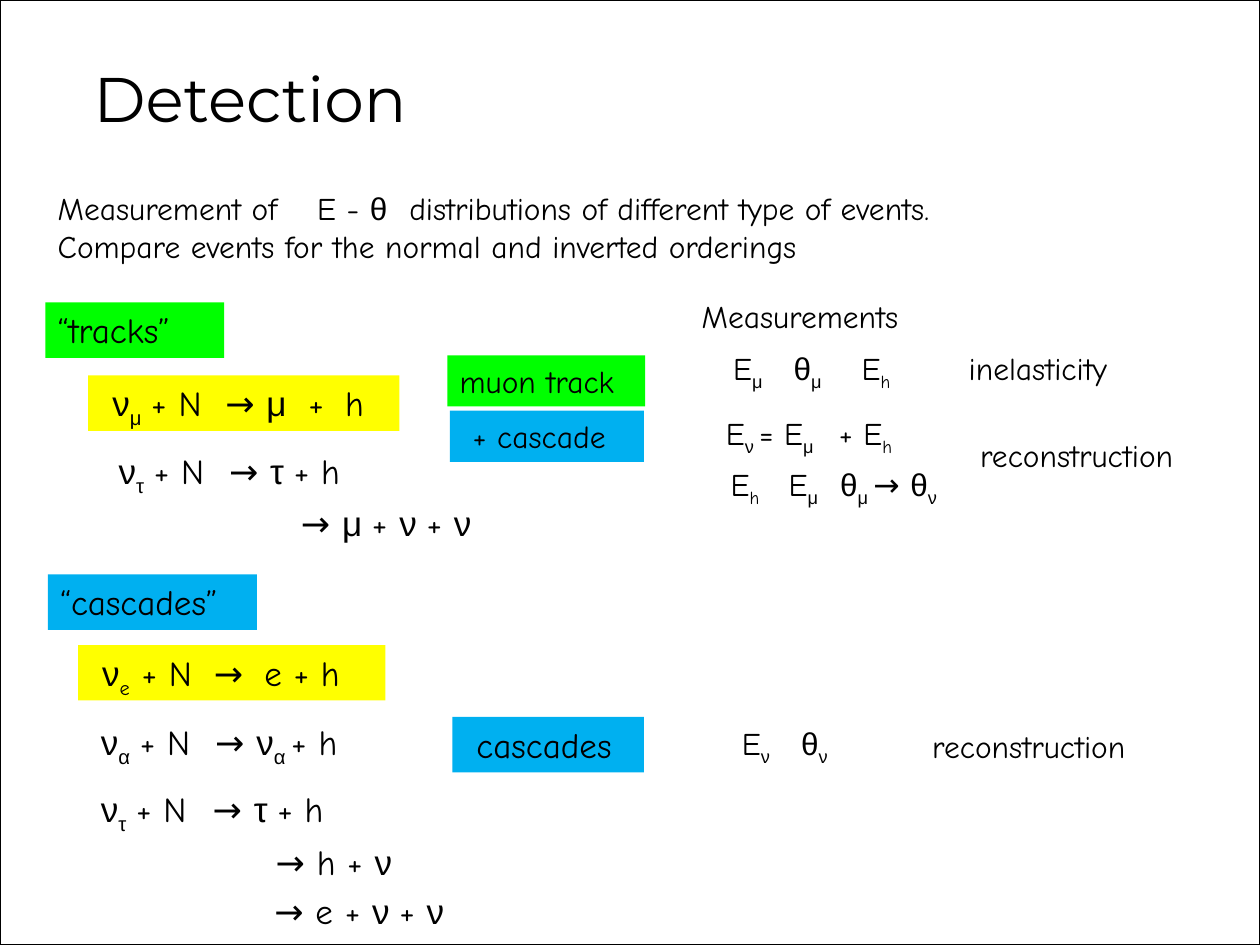
"""Build the Detection slide on a grid of 100 columns by 75 rows."""
from itertools import groupby
from pptx import Presentation
from pptx.dml.color import RGBColor
from pptx.enum.shapes import MSO_SHAPE
from pptx.enum.text import MSO_AUTO_SIZE, PP_ALIGN
from pptx.oxml.ns import qn
from pptx.util import Pt
from lxml.etree import SubElement

GREEN, BLUE, YELLOW, WHITE, BLACK = "00FF00", "00B0F0", "FFFF00", "FFFFFF", "000000"
GREEK = "αθμντ"

prs = Presentation()
prs.slide_width, prs.slide_height = Pt(720), Pt(540)
U = prs.slide_width // 100
s = prs.slides.add_slide(prs.slide_layouts[6])


def rgb(value):
    return RGBColor.from_string(value)


def add_runs(p, text):
    """Write text: [..] is subscript, Greek letters and the spaces after them are Arial."""
    marked, low, font = [], False, "Comic Neue"
    for ch in text:
        if ch in "[]":
            low = ch == "["
            continue
        if ch != " ":
            font = "Arial" if ch in GREEK else "Comic Neue"
        marked.append((ch, font, low))
    for (font, low), group in groupby(marked, key=lambda m: m[1:]):
        r = p.add_run()
        r.text = "".join(m[0] for m in group)
        r.font.name = font
        if low:
            r._r.get_or_add_rPr().set("baseline", "-25000")


sp = s.shapes.add_shape(MSO_SHAPE.RECTANGLE, 0, 0, prs.slide_width, prs.slide_height)
sp.shadow.inherit = False
sp.fill.solid()
sp.fill.fore_color.rgb = rgb(WHITE)
sp.line.color.rgb = rgb(BLACK)
sp.line.width = Pt(0.75)

title = s.shapes.add_textbox(4.2 * U, 4.2 * U, 31.3 * U, 9.1 * U)
title.text_frame.word_wrap = False
p = title.text_frame.paragraphs[0]
p.text = "Detection"
p.alignment = PP_ALIGN.CENTER
p.font.name, p.font.size, p.font.color.rgb = "Montserrat", Pt(36), rgb(BLACK)

boxes = [
    (7, 29.8, 24.7, 20, YELLOW, " ν[μ] + N\t→ μ\t+\th", (9.9, 16.5, 19.4)),
    (35.5, 28.2, 15.7, 18, GREEN, "muon track", ()),
    (35.7, 32.6, 15.4, 18, BLUE, " + cascade", ()),
    (54.7, 23.1, 19.5, 18, None, "Measurements", ()),
    (57.2, 27.2, 15.8, 18, WHITE, "E[μ]\tθ[μ]\tE[h]", (4.8, 10.2)),
    (76.8, 34.1, 21.8, 18, None, "reconstruction", ()),
    (55.8, 32.4, 18.5, 18, WHITE, " E[ν ]= E[μ]\t+ E[h]", (9.8,)),
    (57, 36.4, 19.5, 18, WHITE, "E[h]\tE[μ]\tθ[μ ]→ θ[ν]", (4.6, 8.7)),
    (3.6, 14.5, 83.3, 18, None,
     "Measurement of\tE - θ\tdistributions of different type of events.\n"
     "Compare events for the normal and inverted orderings", (20.6, 27.9)),
    (75.9, 27.2, 17.3, 18, None, "inelasticity", ()),
    (3.6, 24, 14.2, 20, GREEN, "“tracks”", ()),
    (3.8, 45.6, 16.6, 20, BLUE, "“cascades”", ()),
    (6.2, 51.2, 24.4, 20, YELLOW, " ν[e] + N\t→\te + h", (9.8, 13.8)),
    (6.1, 56.7, 24.4, 20, WHITE, " ν[α] + N\t→ ν[α ]+ h", (10,)),
    (6.1, 62, 22.4, 20, WHITE, " ν[τ] + N\t→ τ + h", (9.8,)),
    (35.9, 56.9, 15.2, 20, BLUE, " cascades", ()),
    (57.9, 57, 10.8, 18, WHITE, "E[ν]\tθ[ν]", (4.7,)),
    (7.5, 35.2, 22.4, 20, WHITE, " ν[τ] + N\t→ τ + h", (9.7,)),
    (22.9, 39.3, 16.3, 20, WHITE, "→ μ + ν + ν", ()),
    (20.9, 66.2, 13.4, 20, WHITE, "→ h + ν", ()),
    (20.8, 70.1, 16.3, 20, WHITE, "→ e + ν + ν", ()),
    (73, 57.2, 21.8, 18, None, "reconstruction", ()),
]
for left, top, width, size, fill, text, tabs in boxes:
    lines = text.split("\n")
    height = 1 + len(lines) * size * 0.17
    sp = s.shapes.add_textbox(*(int(v * U) for v in (left, top, width, height)))
    if fill:
        sp.fill.solid()
        sp.fill.fore_color.rgb = rgb(fill)
    tf = sp.text_frame
    tf.word_wrap = True
    tf.auto_size = MSO_AUTO_SIZE.SHAPE_TO_FIT_TEXT
    for i, line in enumerate(lines):
        p = tf.add_paragraph() if i else tf.paragraphs[0]
        if "\t" in line:
            stops = SubElement(p._p.get_or_add_pPr(), qn("a:tabLst"))
            for stop in tabs:
                SubElement(stops, qn("a:tab"), pos=str(int(stop * U)), algn="l")
        p.font.size, p.font.color.rgb = Pt(size), rgb(BLACK)
        add_runs(p, line)

prs.save("out.pptx")
